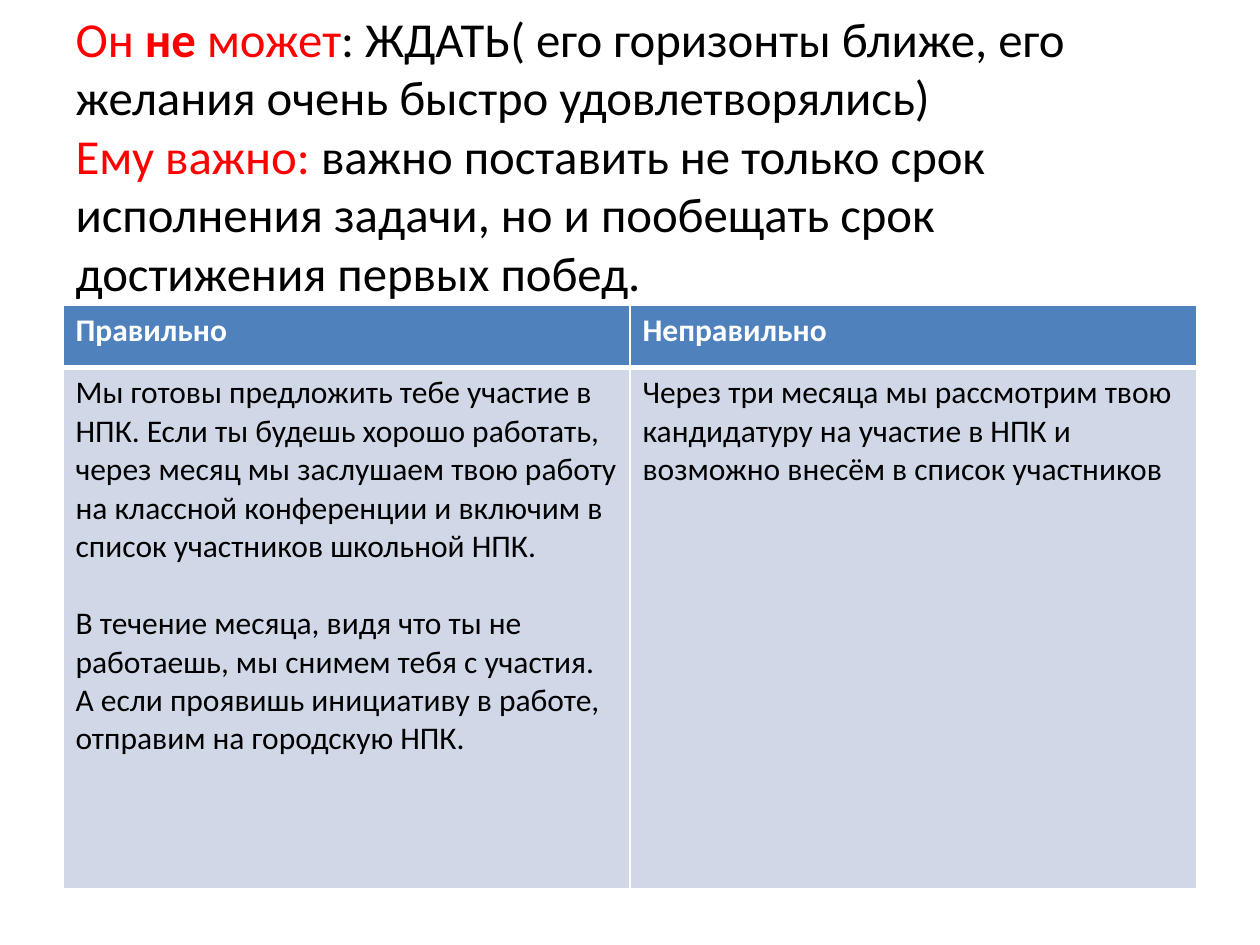
from dataclasses import dataclass

from lxml import etree
from pptx import Presentation
from pptx.dml.color import RGBColor
from pptx.enum.text import MSO_ANCHOR, MSO_AUTO_SIZE, PP_ALIGN
from pptx.oxml.ns import qn
from pptx.util import Cm, Pt

LEFT = PP_ALIGN.LEFT
MIDDLE = MSO_ANCHOR.MIDDLE
NO_AUTOFIT = MSO_AUTO_SIZE.NONE


@dataclass(frozen=True)
class Theme:
    font: str = "Calibri"
    accent: str = "FF0000"
    ink: str = "000000"
    white: str = "FFFFFF"
    header_fill: str = "4F81BD"
    body_fill: str = "D0D8E8"
    title_size: float = 27.9
    table_size: float = 18


THEME = Theme()


def add_run(paragraph, text, size, color, bold=False):
    run = paragraph.add_run()
    run.text = text
    run.font.name = THEME.font
    run.font.size = Pt(size)
    run.font.bold = bold
    run.font.color.rgb = RGBColor.from_string(color)


def add_border(cell, side, width):
    line = etree.SubElement(cell._tc.get_or_add_tcPr(), qn(f"a:ln{side}"), w=str(Pt(width)))
    fill = etree.SubElement(line, qn("a:solidFill"))
    etree.SubElement(fill, qn("a:srgbClr"), val=THEME.white)


deck = Presentation()
deck.slide_width, deck.slide_height = Cm(25.4), Cm(19.05)
slide = deck.slides.add_slide(deck.slide_layouts[5])

# Title: two statements, each opened in the accent colour
STATEMENTS = [
    [
        ("Он ", THEME.accent, False),
        ("не", THEME.accent, True),
        (" может", THEME.accent, False),
        (": ЖДАТЬ( его горизонты ближе, его желания очень быстро удовлетворялись)", THEME.ink, False),
    ],
    [
        ("Ему важно: ", THEME.accent, False),
        ("важно поставить не только срок исполнения задачи, но и пообещать "
         "срок достижения первых побед.", THEME.ink, False),
    ],
]
title = slide.shapes.title
title.left, title.top, title.width, title.height = Cm(1.27), Cm(0.76), Cm(22.86), Cm(5.79)
heading = title.text_frame
heading.auto_size = NO_AUTOFIT
heading.word_wrap = True
heading.vertical_anchor = MIDDLE
# The deep lower inset lifts the text clear of the table
heading.margin_bottom = Cm(1.2)
for index, statement in enumerate(STATEMENTS):
    paragraph = heading.add_paragraph() if index else heading.paragraphs[0]
    paragraph.alignment = LEFT
    for text, color, bold in statement:
        add_run(paragraph, text, THEME.title_size, color, bold)

# Comparison table: each cell is a list of paragraphs
COMPARISON = [
    [["Правильно"], ["Неправильно"]],
    [
        [
            "Мы готовы предложить тебе участие в НПК. Если ты будешь хорошо работать, "
            "через месяц мы заслушаем твою работу на классной конференции и включим "
            "в список участников школьной НПК.",
            "В течение месяца, видя что ты не работаешь, мы снимем тебя с участия. "
            "А если проявишь инициативу в работе, отправим на городскую НПК.",
        ],
        [
            "Через три месяца мы рассмотрим твою кандидатуру на участие в НПК "
            "и возможно внесём в список участников",
        ],
    ],
]
ROW_HEIGHTS = [Cm(1.26), Cm(10.5)]
comparison = slide.shapes.add_table(
    2, 2, Cm(1.27), Cm(6.15), Cm(22.86), sum(ROW_HEIGHTS)
).table

for row, advice in enumerate(COMPARISON):
    comparison.rows[row].height = ROW_HEIGHTS[row]
    is_header = row == 0
    # The thick rule separates the header from the advice
    borders = {"L": 1, "R": 1, "T": 1 if is_header else 3, "B": 3 if is_header else 1}
    for column, paragraphs in enumerate(advice):
        cell = comparison.cell(row, column)
        for side, width in borders.items():
            add_border(cell, side, width)
        cell.fill.solid()
        cell.fill.fore_color.rgb = RGBColor.from_string(
            THEME.header_fill if is_header else THEME.body_fill
        )
        for index, text in enumerate(paragraphs):
            frame = cell.text_frame
            paragraph = frame.add_paragraph() if index else frame.paragraphs[0]
            paragraph.alignment = LEFT
            if index:
                paragraph.space_before = Pt(22)
            add_run(paragraph, text, THEME.table_size,
                    THEME.white if is_header else THEME.ink, is_header)

deck.save("out.pptx")
